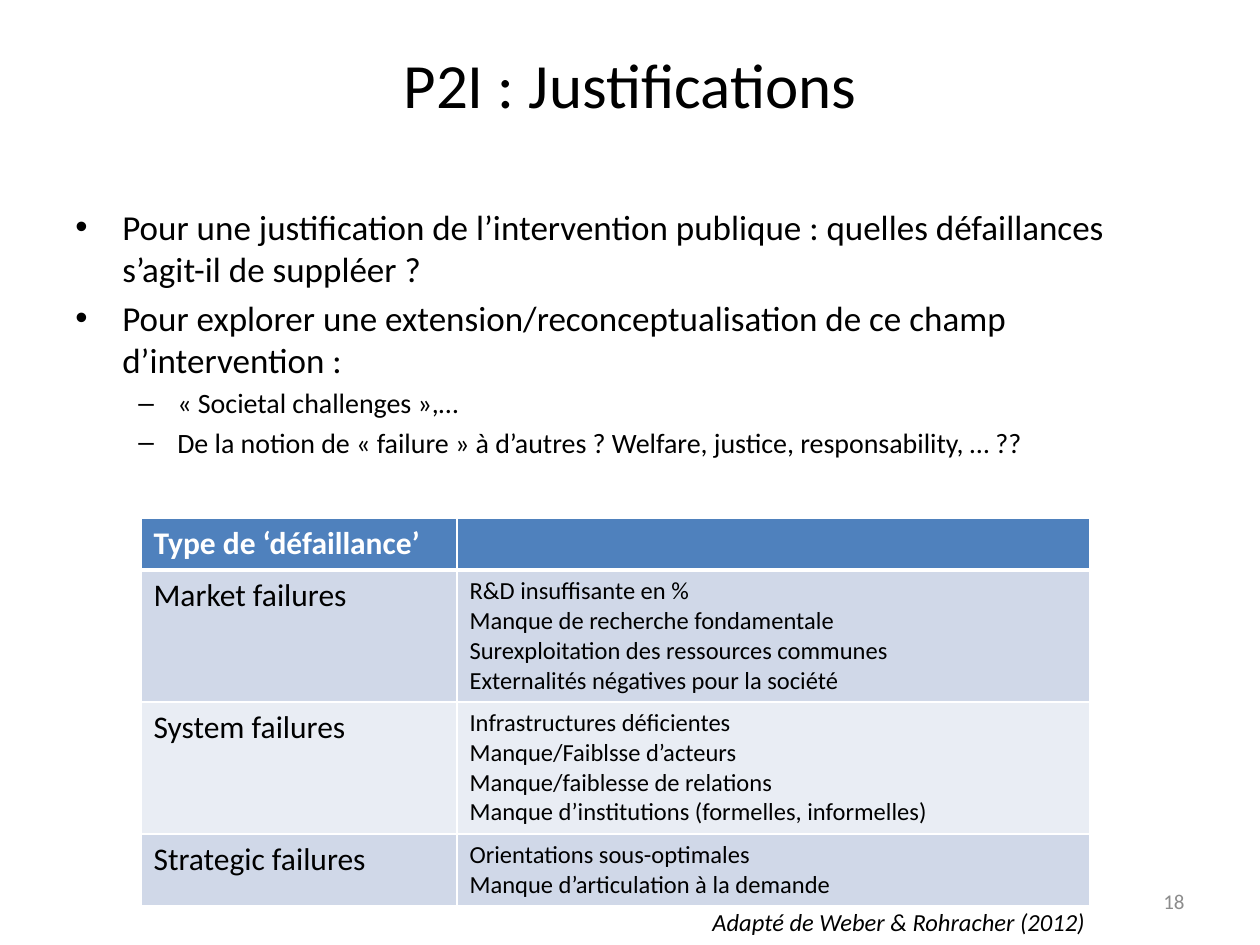
from dataclasses import dataclass
from typing import Any

from lxml.etree import SubElement as Sub
from pptx import Presentation
from pptx.dml.color import RGBColor as RGB
from pptx.enum.text import MSO_ANCHOR as Anchor, PP_ALIGN as Align
from pptx.oxml.ns import qn
from pptx.util import Pt

PX = 914400 / 126
FONT = "Calibri"
COLORS = {
    "text": "000000",
    "paper": "FFFFFF",
    "head": "4F81BD",
    "dark": "D0D8E8",
    "light": "E9EDF4",
    "page": "8C8C8C",
}


@dataclass
class Level:
    mark: str
    size: int
    left: int
    hang: int


@dataclass
class Item:
    level: Level
    text: str


@dataclass
class Row:
    kind: str
    lines: list[str]
    height: int
    fill: str


MAIN = Level("•", 20, 47, 47)
SUB = Level("–", 16, 102, 39)
ITEMS = [
    Item(MAIN, "Pour une justification de l’intervention publique : quelles défaillances s’agit-il de suppléer ?"),
    Item(MAIN, "Pour explorer une extension/reconceptualisation de ce champ d’intervention :"),
    Item(SUB, "« Societal challenges »,…"),
    Item(SUB, "De la notion de « failure » à d’autres ? Welfare, justice, responsability, … ??"),
]
ROWS = [
    Row("Type de ‘défaillance’", [], 52, "head"),
    Row("Market failures", [
        "R&D insuffisante en %",
        "Manque de recherche fondamentale",
        "Surexploitation des ressources communes",
        "Externalités négatives pour la société",
    ], 132, "dark"),
    Row("System failures", [
        "Infrastructures déficientes",
        "Manque/Faiblsse d’acteurs",
        "Manque/faiblesse de relations",
        "Manque d’institutions (formelles, informelles)",
    ], 132, "light"),
    Row("Strategic failures", [
        "Orientations sous-optimales",
        "Manque d’articulation à la demande",
    ], 72, "dark"),
]


def emu(px: int) -> int:
    return round(px * PX)


def place(shape: Any, *box: int) -> None:
    for name, px in zip(("left", "top", "width", "height"), box):
        setattr(shape, name, emu(px))


def style(para: Any, size: int, color: str = "text", **extra: bool) -> None:
    font = para.font
    for name, value in {"name": FONT, "size": Pt(size), **extra}.items():
        setattr(font, name, value)
    font.color.rgb = RGB.from_string(COLORS[color])


def add_box(slide: Any, *box: int) -> Any:
    frame = slide.shapes.add_textbox(*map(emu, box)).text_frame
    frame.word_wrap = True
    return frame


def add_list(slide: Any, items: list[Item]) -> None:
    frame = add_box(slide, 63, 199, 1134, 645)
    frame.text = "\n".join(item.text for item in items)
    for para, item in zip(frame.paragraphs, items):
        level = item.level
        style(para, level.size)
        para.space_before = Pt(level.size / 5)
        props = para._p.get_or_add_pPr()
        props.set("marL", str(emu(level.left)))
        props.set("indent", str(-emu(level.hang)))
        Sub(props, qn("a:buFont"), typeface="Arial")
        Sub(props, qn("a:buChar"), char=level.mark)
        # The schema wants the bullet ahead of the run defaults
        props.append(props.find(qn("a:defRPr")))


def edge(cell: Any, base: int) -> None:
    """Draw white borders, the bottom one base points wide."""
    props = cell._tc.get_or_add_tcPr()
    for spot, (side, width) in enumerate(zip("LRTB", (1, 1, 1, base))):
        line = Sub(props, qn(f"a:ln{side}"), w=str(Pt(width)))
        fill = Sub(line, qn("a:solidFill"))
        Sub(fill, qn("a:srgbClr"), val=COLORS["paper"])
        props.insert(spot, line)


def add_grid(slide: Any, rows: list[Row]) -> None:
    high = sum(row.height for row in rows)
    box = map(emu, (141, 518, 949, high))
    grid = slide.shapes.add_table(len(rows), 2, *box).table
    for col, width in zip(grid.columns, (316, 633)):
        col.width = emu(width)
    for line, row in zip(grid.rows, rows):
        line.height = emu(row.height)
        head = row.fill == "head"
        texts = (row.kind, "\n".join(row.lines))
        for cell, text, size in zip(line.cells, texts, (18, 14)):
            cell.text = text
            cell.fill.solid()
            cell.fill.fore_color.rgb = RGB.from_string(COLORS[row.fill])
            for para in cell.text_frame.paragraphs:
                style(para, size, "paper" if head else "text", bold=head)
            edge(cell, 3 if head else 1)


def main() -> None:
    deck = Presentation()
    deck.slide_width, deck.slide_height = emu(1260), emu(945)
    slide = deck.slides.add_slide(deck.slide_layouts[5])

    title = slide.shapes.title
    place(title, 63, 4, 1134, 158)
    title.text = "P2I : Justifications"
    title.text_frame.vertical_anchor = Anchor.MIDDLE
    para = title.text_frame.paragraphs[0]
    para.alignment = Align.CENTER
    style(para, 36)

    add_list(slide, ITEMS)
    add_grid(slide, ROWS)

    credit = add_box(slide, 700, 901, 408, 43)
    credit.word_wrap = False
    credit.text = "Adapté de Weber & Rohracher (2012)"
    style(credit.paragraphs[0], 14, italic=True)

    page = add_box(slide, 903, 876, 294, 50)
    page.vertical_anchor = Anchor.MIDDLE
    page.text = "18"
    page.paragraphs[0].alignment = Align.RIGHT
    style(page.paragraphs[0], 12, "page")

    deck.save("out.pptx")


if __name__ == "__main__":
    main()
